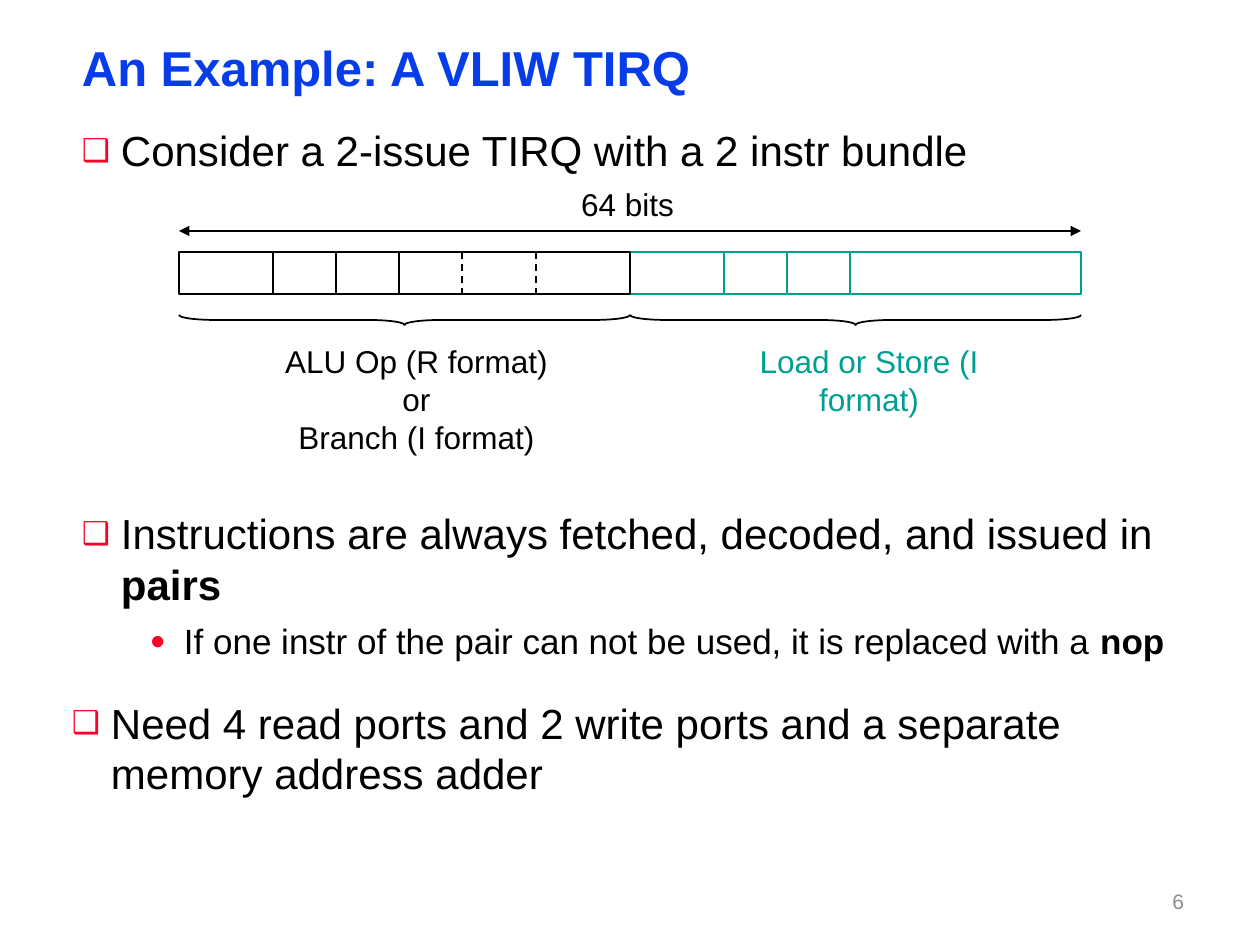
from lxml import etree
from pptx import Presentation
from pptx.dml.color import RGBColor
from pptx.enum.dml import MSO_LINE
from pptx.enum.shapes import MSO_CONNECTOR, MSO_SHAPE
from pptx.enum.text import MSO_ANCHOR, PP_ALIGN
from pptx.oxml.ns import qn
from pptx.util import Emu, Pt

BLACK = RGBColor(0x00, 0x00, 0x00)
BLUE = RGBColor(0x06, 0x3D, 0xE8)
TEAL = RGBColor(0x00, 0xA0, 0x91)
GRAY = RGBColor(0x8C, 0x8C, 0x8C)
RED = RGBColor(0xFC, 0x01, 0x28)
LEFT, CENTER, RIGHT = PP_ALIGN.LEFT, PP_ALIGN.CENTER, PP_ALIGN.RIGHT
TOP, MIDDLE = MSO_ANCHOR.TOP, MSO_ANCHOR.MIDDLE
STRAIGHT, DASH = MSO_CONNECTOR.STRAIGHT, MSO_LINE.DASH
RECTANGLE, BRACE = MSO_SHAPE.RECTANGLE, MSO_SHAPE.RIGHT_BRACE
FONT = "Arial"
BULLETS = [("❑", 39, 39), ("●", 102, 34)]
WORD_LEFT, WORD_TOP, HALF_WIDTH, WORD_HEIGHT = 179, 252, 451, 42
FIELD_OFFSETS = [94, 157, 220]
DASHED_OFFSETS = [283, 357]


def px(length):
    """Turn pixels into EMU."""
    return Emu(round(length * 914400 / 126))


def add_bullet(para, level):
    """Give a paragraph the red bullet and hanging indent of its level."""
    symbol, margin, hang = BULLETS[level]
    props = para._p.get_or_add_pPr()
    props.set("marL", str(px(margin)))
    props.set("indent", str(-px(hang)))
    color = etree.SubElement(props, qn("a:buClr"))
    etree.SubElement(color, qn("a:srgbClr"), val=str(RED))
    etree.SubElement(props, qn("a:buSzPct"), val="75000")
    etree.SubElement(props, qn("a:buFont"), typeface=FONT)
    etree.SubElement(props, qn("a:buChar"), char=symbol)


def add_spans(para, spans, size, color, bold=False):
    """Fill a paragraph with spans, setting every second one in bold."""
    for index, text in enumerate(spans):
        span = para.add_run()
        span.text = text
        span.font.name = FONT
        span.font.size = Pt(size)
        span.font.bold = bold or index % 2 == 1
        span.font.color.rgb = color


def add_text_box(page, left, top, width, height, inset=(9, 4), anchor=TOP):
    """Add an empty wrapping text box and return its frame."""
    frame = page.shapes.add_textbox(px(left), px(top), px(width), px(height)).text_frame
    frame.word_wrap = True
    frame.vertical_anchor = anchor
    frame.margin_left = frame.margin_right = px(inset[0])
    frame.margin_top = frame.margin_bottom = px(inset[1])
    return frame


def add_label(page, text, *place, size=18, color=BLACK, bold=False, align=CENTER,
              inset=(13, 6), anchor=TOP, spacing=1.0):
    """Add plain text with one paragraph for each line."""
    frame = add_text_box(page, *place, inset=inset, anchor=anchor)
    for index, line in enumerate(text.split("\n")):
        para = frame.add_paragraph() if index else frame.paragraphs[0]
        para.alignment = align
        para.line_spacing = spacing
        add_spans(para, [line], size, color, bold)


def add_bullets(page, items, *place, spacing=1.0):
    """Add bulleted paragraphs, one level deeper for each item."""
    frame = add_text_box(page, *place)
    for level, spans in enumerate(items):
        para = frame.add_paragraph() if level else frame.paragraphs[0]
        para.line_spacing = spacing
        if level:
            para.space_before = Pt(6)
        add_bullet(para, level)
        add_spans(para, spans, 24 - 4 * level, BLACK)


def add_outline(page, kind, left, top, width, height, color):
    """Add an unfilled shape with a thin outline and return it."""
    shape = page.shapes.add_shape(kind, px(left), px(top), px(width), px(height))
    shape.shadow.inherit = False
    shape.fill.background()
    shape.line.color.rgb = color
    shape.line.width = Pt(1)
    return shape


def add_line(page, start, end, color=BLACK, dash=None, arrows=False):
    """Add a thin straight line, optionally dashed or with arrowheads."""
    line = page.shapes.add_connector(STRAIGHT, *map(px, start + end))
    line.line.color.rgb = color
    line.line.width = Pt(1)
    if dash:
        line.line.dash_style = dash
    if arrows:
        outline = line.line._get_or_add_ln()
        for name in ("a:headEnd", "a:tailEnd"):
            etree.SubElement(outline, qn(name), type="triangle")
    etree.SubElement(line._element.spPr, qn("a:effectLst"))


def add_divider(page, x, color, dash=None):
    """Add a vertical field boundary in the instruction word."""
    add_line(page, (x, WORD_TOP), (x, WORD_TOP + WORD_HEIGHT), color, dash)


def add_instruction(page, left, color):
    """Add one half of the bundle with its fields and the brace below."""
    add_outline(page, RECTANGLE, left, WORD_TOP, HALF_WIDTH, WORD_HEIGHT, color)
    for offset in FIELD_OFFSETS:
        add_divider(page, left + offset, color)
    thickness, middle = 10, 320
    brace = add_outline(page, BRACE, left + (HALF_WIDTH - thickness) / 2,
                        middle - HALF_WIDTH / 2, thickness, HALF_WIDTH, BLACK)
    brace.adjustments[0] = 3.58
    brace.rotation = 90


def add_bundle(page):
    """Draw the 64-bit bundle of two instructions with its labels."""
    center = WORD_LEFT + HALF_WIDTH
    add_instruction(page, center, TEAL)
    add_instruction(page, WORD_LEFT, BLACK)
    for offset in DASHED_OFFSETS:
        add_divider(page, WORD_LEFT + offset, BLACK, DASH)
    add_line(page, (WORD_LEFT, 231), (center + HALF_WIDTH, 231), arrows=True)
    add_label(page, "64 bits", 557, 179, 141, 50)
    add_label(page, "ALU Op (R format)\nor\nBranch (I format)", 267, 336, 299, 126)
    add_label(page, "Load or Store (I format)", 704, 336, 330, 88, color=TEAL)


def main():
    """Build the slide and save it."""
    deck = Presentation()
    deck.slide_width, deck.slide_height = px(1260), px(945)
    page = deck.slides.add_slide(deck.slide_layouts[6])
    add_label(page, "An Example: A VLIW TIRQ", 73, 42, 1124, 58, size=28, color=BLUE,
              bold=True, align=LEFT, inset=(9, 4), spacing=0.87)
    add_bullets(page, [["Consider a 2-issue TIRQ with a 2 instr bundle"]],
                73, 126, 1124, 57, spacing=0.9)
    add_bundle(page)
    add_bullets(page, [
        ["Instructions are always fetched, decoded, and issued in ", "pairs"],
        ["If one instr of the pair can not be used, it is replaced with a ", "nop"],
    ], 73, 504, 1124, 164)
    add_bullets(page, [["Need 4 read ports and 2 write ports and a separate memory address adder"]],
                63, 693, 1124, 107)
    add_label(page, "6", 903, 876, 294, 50, size=12, color=GRAY, align=RIGHT, anchor=MIDDLE)
    deck.save("out.pptx")


if __name__ == "__main__":
    main()
